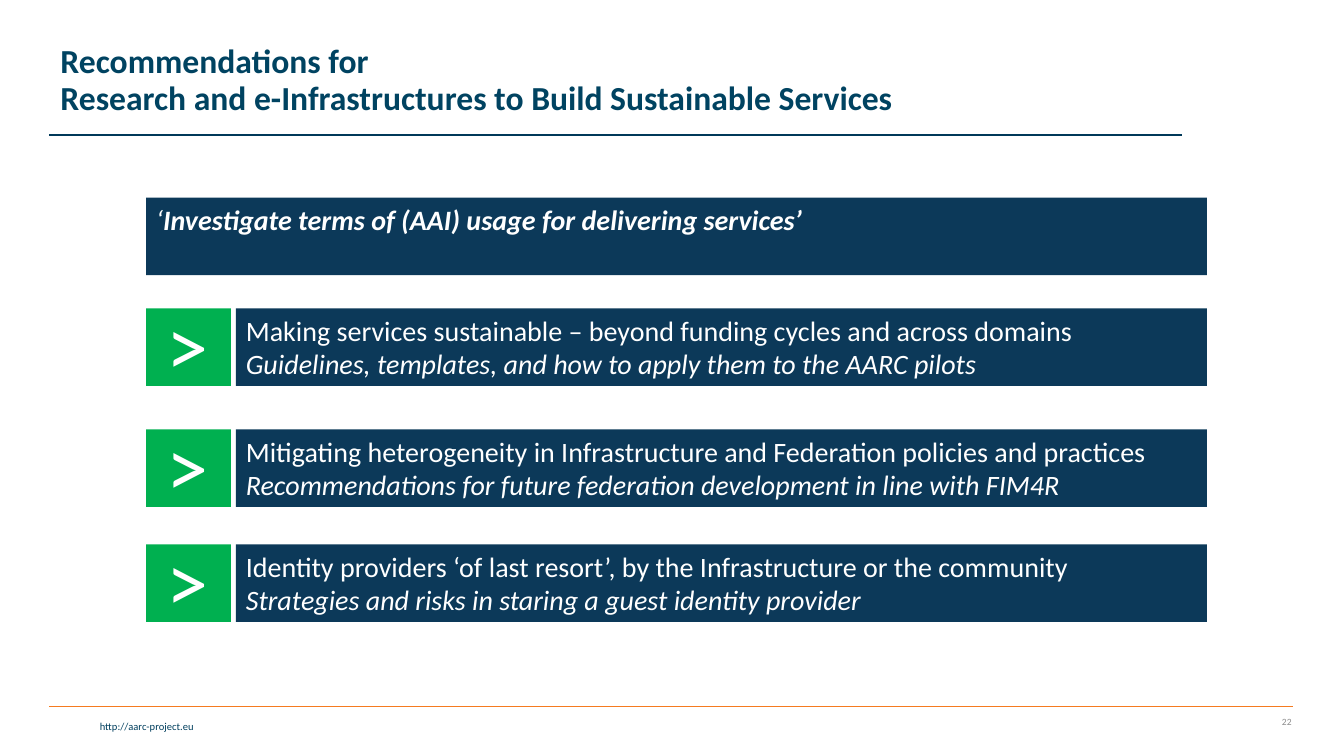
"""Build the slide on recommendations for sustainable services."""
from lxml.etree import SubElement
from pptx import Presentation
from pptx.dml.color import RGBColor
from pptx.enum.shapes import MSO_CONNECTOR as Connector, MSO_SHAPE as Shape
from pptx.enum.text import MSO_ANCHOR as Anchor, MSO_AUTO_SIZE as AutoSize, PP_ALIGN as Align
from pptx.oxml.ns import qn
from pptx.util import Inches, Pt

TITLE = [[("Recommendations for", {})],
         [("Research and e-Infrastructures to Build Sustainable Services", {})]]
HEADLINE = [[("‘", {}), ("Investigate terms of (AAI) usage for delivering services’", {"bold": True})]]
RECOMMENDATIONS = [
    (3.06, "Making services sustainable – beyond funding cycles and across domains",
     "Guidelines, templates, and how to apply them to the AARC pilots"),
    (4.26, "Mitigating heterogeneity in Infrastructure and Federation policies and practices",
     "Recommendations for future federation development in line with FIM4R"),
    (5.4, "Identity providers ‘of last resort’, by the Infrastructure or the community",
     "Strategies and risks in staring a guest identity provider"),
]
MARK = [[("˃", {})]]
WEBSITE = [[("http://aarc-project.eu", {})]]
PAGE = [[("22", {})]]

WIDTH, HEIGHT = 13.33, 7.5
LEFT, RIGHT = 1.45, 11.97
BAR_HEIGHT, MARK_WIDTH, GAP = 0.77, 0.84, 0.05
RULE_LEFT = 0.49
NAVY, GREEN, ORANGE, WHITE = "0C3959", "00B050", "F57B20", "FFFFFF"


def color(code):
    """Turn a hex string into a colour."""
    return RGBColor.from_string(code)


def write(shape, lines, size, ink=WHITE, bold=False, italic=False, align=Align.LEFT,
          anchor=Anchor.TOP, spacing=1.0):
    """Write lines of formatted runs as one paragraph."""
    frame = shape.text_frame
    frame.word_wrap = True
    frame.auto_size = AutoSize.NONE
    frame.vertical_anchor = anchor
    paragraph = frame.paragraphs[0]
    paragraph.alignment = align
    paragraph.line_spacing = spacing
    paragraph.font.size = Pt(size)
    for number, line in enumerate(lines):
        if number:
            paragraph.add_line_break()
        for words, style in line:
            run = paragraph.add_run()
            run.text = words
            font = run.font
            font.name, font.size = "Calibri", Pt(size)
            font.color.rgb = color(ink)
            font.bold = style.get("bold", bold)
            font.italic = style.get("italic", italic)


def block(slide, left, top, width, fill):
    """Add a flat bar of the common height."""
    bar = slide.shapes.add_shape(Shape.RECTANGLE, *map(Inches, (left, top, width, BAR_HEIGHT)))
    bar.shadow.inherit = False
    bar.fill.solid()
    bar.fill.fore_color.rgb = color(fill)
    bar.line.fill.background()
    return bar


def label(slide, place, lines, size, **style):
    """Add a text box."""
    write(slide.shapes.add_textbox(*map(Inches, place)), lines, size, **style)


def rule(slide, right, top, ink):
    """Add a thin horizontal line from the left margin."""
    line = slide.shapes.add_connector(
        Connector.STRAIGHT, *map(Inches, (RULE_LEFT, top, right, top)))
    line.line.color.rgb = color(ink)
    line.line.width = Pt(1)
    SubElement(line._element.spPr, qn("a:effectLst"))


def main():
    """Lay out the slide and save it."""
    deck = Presentation()
    deck.slide_width, deck.slide_height = Inches(WIDTH), Inches(HEIGHT)
    slide = deck.slides.add_slide(deck.slide_layouts[5])

    rule(slide, 12.82, 7.01, ORANGE)
    rule(slide, 11.72, 1.34, "003959")
    label(slide, (0.03, 7.09, 1.99, 0.23), WEBSITE, 7.5, ink="003F5E", align=Align.RIGHT)
    label(slide, (12.1, 7.01, 0.81, 0.3), PAGE, 6.8, ink="8C8C8C", align=Align.RIGHT,
          anchor=Anchor.MIDDLE)

    title = slide.shapes.title
    title.left, title.top, title.width, title.height = map(Inches, (0.5, 0.08, 10.51, 1.45))
    write(title, TITLE, 24, ink="004361", bold=True, anchor=Anchor.MIDDLE, spacing=0.9)

    write(block(slide, LEFT, 1.96, RIGHT - LEFT, NAVY), HEADLINE, 20, italic=True)
    bar_left = LEFT + MARK_WIDTH + GAP
    for top, topic, detail in RECOMMENDATIONS:
        lines = [[(topic, {})], [(detail, {"italic": True})]]
        write(block(slide, bar_left, top, RIGHT - bar_left, NAVY), lines, 20)
        block(slide, LEFT, top, MARK_WIDTH, GREEN)
        label(slide, (LEFT + 0.1, top - 0.21, 0.7, 1.11), MARK, 60)

    deck.save("out.pptx")


if __name__ == "__main__":
    main()
